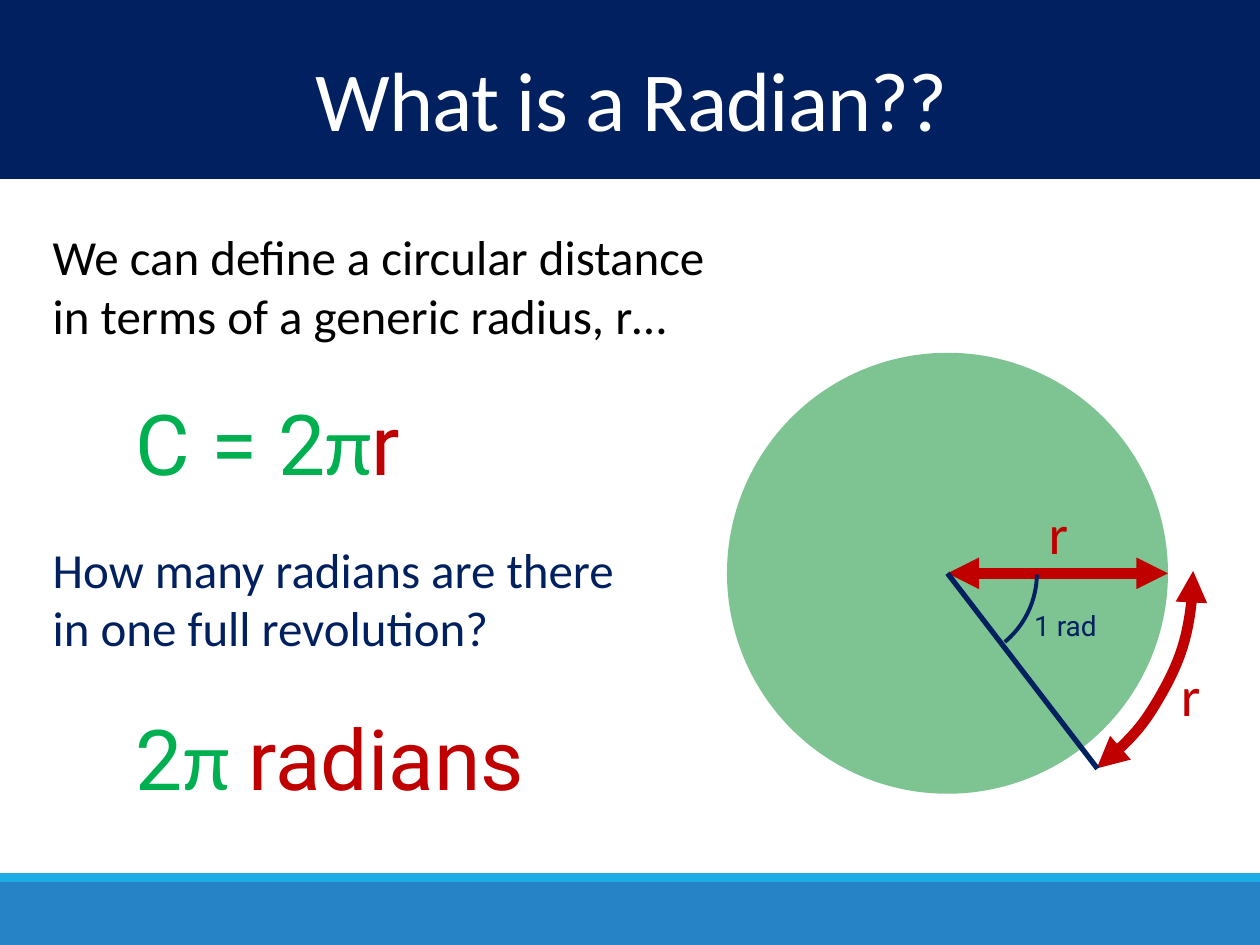
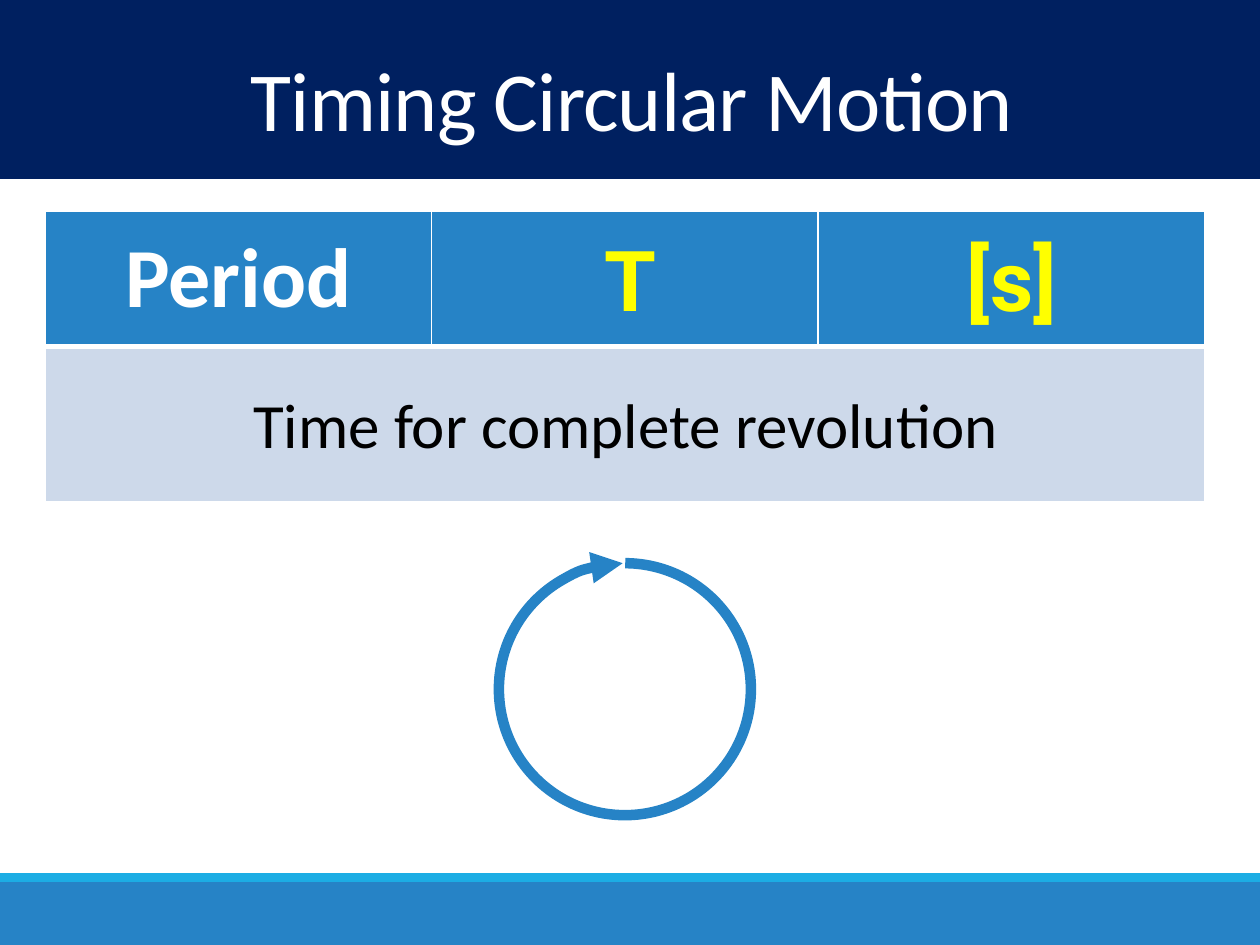
import dataclasses

import lxml.etree
import pptx
import pptx.dml.color
import pptx.enum.shapes
import pptx.enum.text
import pptx.oxml.ns
import pptx.util

SHAPES = pptx.enum.shapes.MSO_SHAPE
ALIGN = pptx.enum.text.PP_ALIGN
ANCHOR = pptx.enum.text.MSO_ANCHOR
AUTO_SIZE = pptx.enum.text.MSO_AUTO_SIZE
EMU_PER_PX = 9144  # 100 px to the inch


@dataclasses.dataclass(frozen=True)
class Theme:
    navy: str = "002060"
    blue: str = "2683C6"
    sky: str = "1CADE4"
    pale: str = "CDD9EA"
    mint: str = "7EC492"
    green: str = "00B050"
    red: str = "C00000"
    yellow: str = "FFFF00"
    white: str = "FFFFFF"
    black: str = "000000"
    text_font: str = "Calibri"
    formula_font: str = "Roboto"
    display: int = 48
    statement: int = 36
    label: int = 32
    body: int = 28
    small: int = 16
    heavy_line: float = 6
    side_line: float = 3
    fine_line: float = 2.25


THEME = Theme()


def px(length):
    return pptx.util.Emu(round(length * EMU_PER_PX))


def rgb(color):
    return pptx.dml.color.RGBColor.from_string(color)


def apply_format(target, values):
    for name, value in values.items():
        setattr(target, name, value)


def add_xml(parent, tag, **attributes):
    return lxml.etree.SubElement(parent, pptx.oxml.ns.qn(tag), attributes)


class SlideBuilder:
    """Hold the theme and the slide being drawn; boxes are (left, top, width, height)."""

    def __init__(self, presentation, theme):
        self.presentation = presentation
        self.theme = theme
        self.slide = None

    def start(self, title):
        layout = self.presentation.slide_layouts.get_by_name("Title Only")
        self.slide = self.presentation.slides.add_slide(layout)
        shape = self.slide.shapes.title
        apply_format(shape, dict(zip(("left", "top", "width", "height"), map(px, (3, 42, 997, 84)))))
        apply_format(shape.text_frame, {"vertical_anchor": ANCHOR.MIDDLE, "auto_size": AUTO_SIZE.NONE})
        paragraph = shape.text_frame.paragraphs[0]
        apply_format(paragraph, {"alignment": ALIGN.CENTER, "line_spacing": 0.85})
        run = self.run(paragraph, title, self.theme.white, self.theme.display)
        run._r.get_or_add_rPr().set("spc", "-50")

    def run(self, paragraph, text, color, size, font=None, bold=False):
        run = paragraph.add_run()
        run.text = text
        apply_format(run.font, {
            "name": font or self.theme.text_font,
            "size": pptx.util.Pt(size),
            "bold": bold,
        })
        run.font.color.rgb = rgb(color)
        return run

    def text(self, box, pieces, size, align=ALIGN.LEFT, wrap=False, bold=False):
        """Add a text box from (text, color, font) pieces on one paragraph."""
        frame = self.slide.shapes.add_textbox(*map(px, box)).text_frame
        apply_format(frame, {"word_wrap": wrap, "auto_size": AUTO_SIZE.SHAPE_TO_FIT_TEXT})
        paragraph = frame.paragraphs[0]
        paragraph.alignment = align
        for text, color, font in pieces:
            self.run(paragraph, text, color, size, font, bold)

    def solid(self, kind, box, color):
        shape = self.slide.shapes.add_shape(kind, *map(px, box))
        shape.shadow.inherit = False
        shape.fill.solid()
        shape.fill.fore_color.rgb = rgb(color)
        shape.line.fill.background()
        return shape

    def master_band(self, top, height, color):
        """Place a full-width band on the slide master, behind its placeholders."""
        band = self.solid(SHAPES.RECTANGLE, (0, top, 1000, height), color)
        self.presentation.slide_master.shapes.element.insert(2, band.element)

    def stroke(self, shape, color, width, arrows):
        shape.line.color.rgb = rgb(color)
        shape.line.width = pptx.util.Pt(width)
        line = shape.element.spPr.find(pptx.oxml.ns.qn("a:ln"))
        for end in arrows:
            add_xml(line, f"a:{end}End", type="triangle")

    def arc(self, box, start, end, color, width, arrows=()):
        """Draw an arc clockwise between two angles in degrees."""
        shape = self.slide.shapes.add_shape(SHAPES.ARC, *map(px, box))
        shape.shadow.inherit = False
        shape.fill.background()
        for index, angle in enumerate((start, end)):
            shape.adjustments[index] = angle * 0.6
        self.stroke(shape, color, width, arrows)

    def line(self, start, end, color, width, arrows=()):
        connector = self.slide.shapes.add_connector(
            pptx.enum.shapes.MSO_CONNECTOR.STRAIGHT, *map(px, start + end))
        self.stroke(connector, color, width, arrows)
        add_xml(connector.element.spPr, "a:effectLst")

    def table(self, box, row_heights, row_colors, column_count):
        frame = self.slide.shapes.add_table(len(row_heights), column_count, *map(px, box))
        table = frame.table
        apply_format(table, {"first_row": False, "horz_banding": False})
        for row, height, color in zip(table.rows, row_heights, row_colors):
            row.height = px(height)
            for cell in row.cells:
                cell.vertical_anchor = ANCHOR.MIDDLE
                cell.fill.solid()
                cell.fill.fore_color.rgb = rgb(color)
        return table

    def cell_borders(self, cell, widths):
        """Set white borders from points given for the sides L, R, T, B."""
        properties = cell._tc.get_or_add_tcPr()
        for index, (side, width) in enumerate(widths.items()):
            border = add_xml(properties, f"a:ln{side}", w=str(pptx.util.Pt(width)))
            add_xml(add_xml(border, "a:solidFill"), "a:srgbClr", val=self.theme.white)
            properties.insert(index, border)


def draw_radian_slide(builder):
    theme = builder.theme
    both_ends = ("head", "tail")
    center = (752, 455)
    radius = 175

    def centered_box(half_size):
        return center[0] - half_size, center[1] - half_size, 2 * half_size, 2 * half_size

    def radius_label(left, top):
        builder.text((left, top, 36, 64), [("r", theme.red, None)], theme.label, ALIGN.CENTER)

    builder.solid(SHAPES.OVAL, centered_box(radius), theme.mint)
    radius_label(822, 391)
    builder.arc(centered_box(195), 359.46, 52.6, theme.red, theme.heavy_line, both_ends)
    radius_label(927, 519)

    for top, width, sentence, color in (
        (175, 545, "We can define a circular distance in terms of a generic radius, r…", theme.black),
        (423, 476, "How many radians are there in one full revolution?", theme.navy),
    ):
        builder.text((32, top, width, 104), [(sentence, color, None)], theme.body, wrap=True)

    for top, width, number, pi, unit in (
        (306, 260, "C = 2", "π", "r"),
        (556, 342, "2", "π ", "radians"),
    ):
        builder.text((98, top, width, 91), [
            (number, theme.green, theme.formula_font),
            (pi, theme.green, theme.text_font),
            (unit, theme.red, theme.formula_font),
        ], theme.display)

    builder.line((center[0] + radius, center[1]), center, theme.red, theme.heavy_line, both_ends)
    builder.arc(centered_box(71), 0.84, 50.13, theme.navy, theme.fine_line)
    builder.line(center, (871, 610), theme.navy, theme.side_line)
    builder.text((811, 478, 71, 37), [("1 rad", theme.navy, theme.formula_font)], theme.small)


def draw_period_slide(builder):
    theme = builder.theme
    table = builder.table((36, 168, 920, 230), (107, 123), (theme.blue, theme.pale), 3)
    for cell in table.rows[0].cells:
        builder.cell_borders(cell, {"L": 1, "R": 1, "T": 1, "B": 3})
    for cell in table.rows[1].cells:
        builder.cell_borders(cell, {"L": 1, "R": 1, "T": 3, "B": 1})
    table.cell(1, 0).merge(table.cell(1, 2))
    heading = table.cell(0, 0).text_frame.paragraphs[0]
    heading.alignment = ALIGN.CENTER
    builder.run(heading, "Period", theme.white, theme.display, bold=True)

    builder.arc((396, 447, 200, 200), 270.16, 269, theme.blue, theme.heavy_line, ("tail",))
    for left, width, symbol in ((470, 60, "T"), (753, 100, "[s]")):
        builder.text((left, 176, width, 91), [(symbol, theme.yellow, theme.formula_font)],
                     theme.display, ALIGN.CENTER, bold=True)
    builder.text((188, 301, 617, 71), [("Time for complete revolution", theme.black, None)],
                 theme.statement, ALIGN.CENTER)


def main():
    presentation = pptx.Presentation()
    apply_format(presentation, {"slide_width": px(1000), "slide_height": px(750)})
    builder = SlideBuilder(presentation, THEME)

    builder.start("What is a Radian??")
    for top, height, color in ((0, 142, THEME.navy), (693, 7, THEME.sky), (700, 50, THEME.blue)):
        builder.master_band(top, height, color)
    draw_radian_slide(builder)

    builder.start("Timing Circular Motion")
    draw_period_slide(builder)

    presentation.save("out.pptx")


if __name__ == "__main__":
    main()
